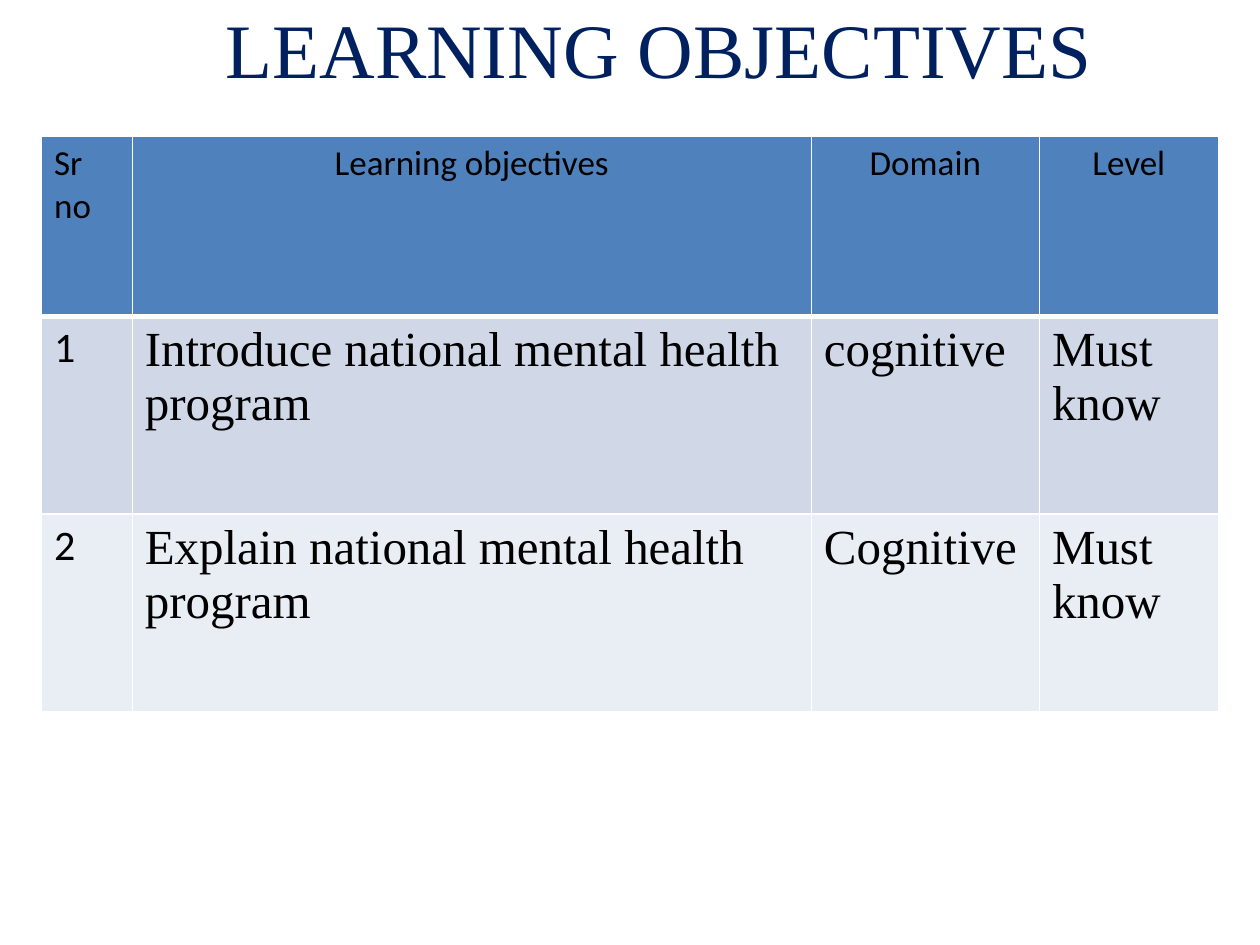
from lxml.etree import SubElement
from pptx import Presentation
from pptx.dml.color import RGBColor
from pptx.enum.text import MSO_ANCHOR as Anchor, PP_ALIGN as Align
from pptx.oxml.ns import qn
from pptx.util import Inches, Pt

TITLE = "LEARNING OBJECTIVES"
ROWS = [
    ("Sr no", "Learning objectives", "Domain", "Level"),
    ("1", "Introduce national mental health program", "cognitive", "Must know"),
    ("2", "Explain national mental health program", "Cognitive", "Must know"),
]
COLUMN_WIDTHS = [0.72, 5.39, 1.81, 1.42]
ROW_HEIGHTS = [1.43, 1.57, 1.57]
ROW_FILLS = ["4F81BD", "D0D8E8", "E9EDF4"]
SANS, SERIF = "Calibri", "Times New Roman"


def format_text(paragraph, font_name, size, color, align):
    """Style every run of a paragraph."""
    paragraph.alignment = align
    for run in paragraph.runs:
        font = run.font
        font.name, font.size, font.bold = font_name, Pt(size), False
        font.color.rgb = RGBColor.from_string(color)


def add_borders(cell, widths):
    """Draw white cell borders from a mapping of side to points."""
    properties = cell._tc.get_or_add_tcPr()
    for side, width in widths.items():
        line = SubElement(properties, qn(f"a:ln{side}"), w=str(Pt(width)))
        fill = SubElement(line, qn("a:solidFill"))
        SubElement(fill, qn("a:srgbClr"), val="FFFFFF")


def add_title(slide):
    """Place the heading, shifted right by a wider left inset."""
    box = slide.shapes.add_textbox(Inches(0.5), Inches(-0.25), Inches(9), Inches(1.25))
    frame = box.text_frame
    frame.word_wrap = True
    frame.vertical_anchor = Anchor.MIDDLE
    frame.margin_left = Inches(0.56)
    frame.text = TITLE
    format_text(frame.paragraphs[0], SERIF, 44, "002060", Align.CENTER)


def add_objectives_table(slide):
    """Build the table of objectives."""
    table = slide.shapes.add_table(
        len(ROWS), len(COLUMN_WIDTHS), Inches(0.33), Inches(1.08),
        Inches(sum(COLUMN_WIDTHS)), Inches(sum(ROW_HEIGHTS)),
    ).table
    for column, width in zip(table.columns, COLUMN_WIDTHS):
        column.width = Inches(width)
    for row_index, texts in enumerate(ROWS):
        table.rows[row_index].height = Inches(ROW_HEIGHTS[row_index])
        is_header = row_index == 0
        borders = {"L": 1, "R": 1, "T": 3 if row_index == 1 else 1, "B": 3 if is_header else 1}
        for column_index, text in enumerate(texts):
            cell = table.cell(row_index, column_index)
            is_number = column_index == 0
            add_borders(cell, borders)
            cell.fill.solid()
            cell.fill.fore_color.rgb = RGBColor.from_string(ROW_FILLS[row_index])
            cell.text_frame.text = text
            font_name = SANS if is_header or is_number else SERIF
            size = 20 if is_header else 24 if is_number else 28
            align = Align.CENTER if is_header and not is_number else Align.LEFT
            format_text(cell.text_frame.paragraphs[0], font_name, size, "000000", align)


def main():
    """Create the slide and save it."""
    presentation = Presentation()
    presentation.slide_width, presentation.slide_height = Inches(10), Inches(7.5)
    slide = presentation.slides.add_slide(presentation.slide_layouts[6])
    add_title(slide)
    add_objectives_table(slide)
    presentation.save("out.pptx")


if __name__ == "__main__":
    main()
